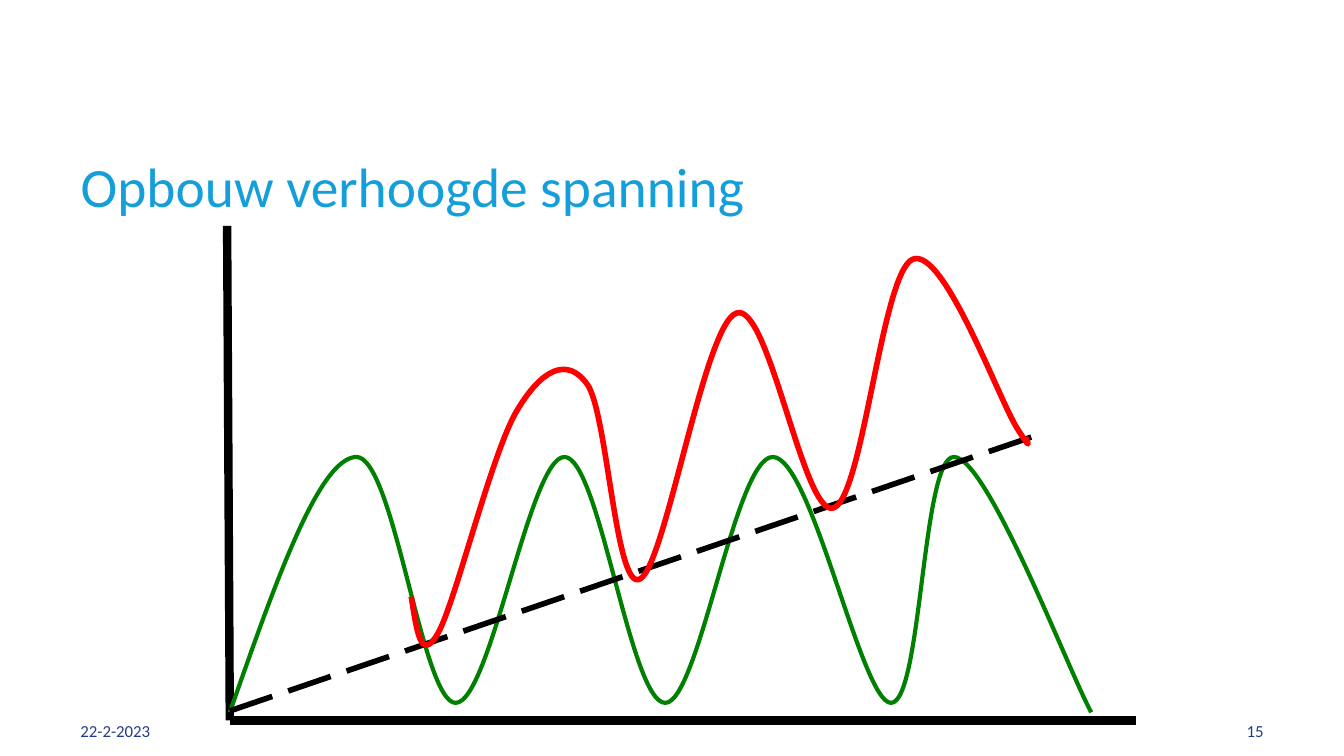
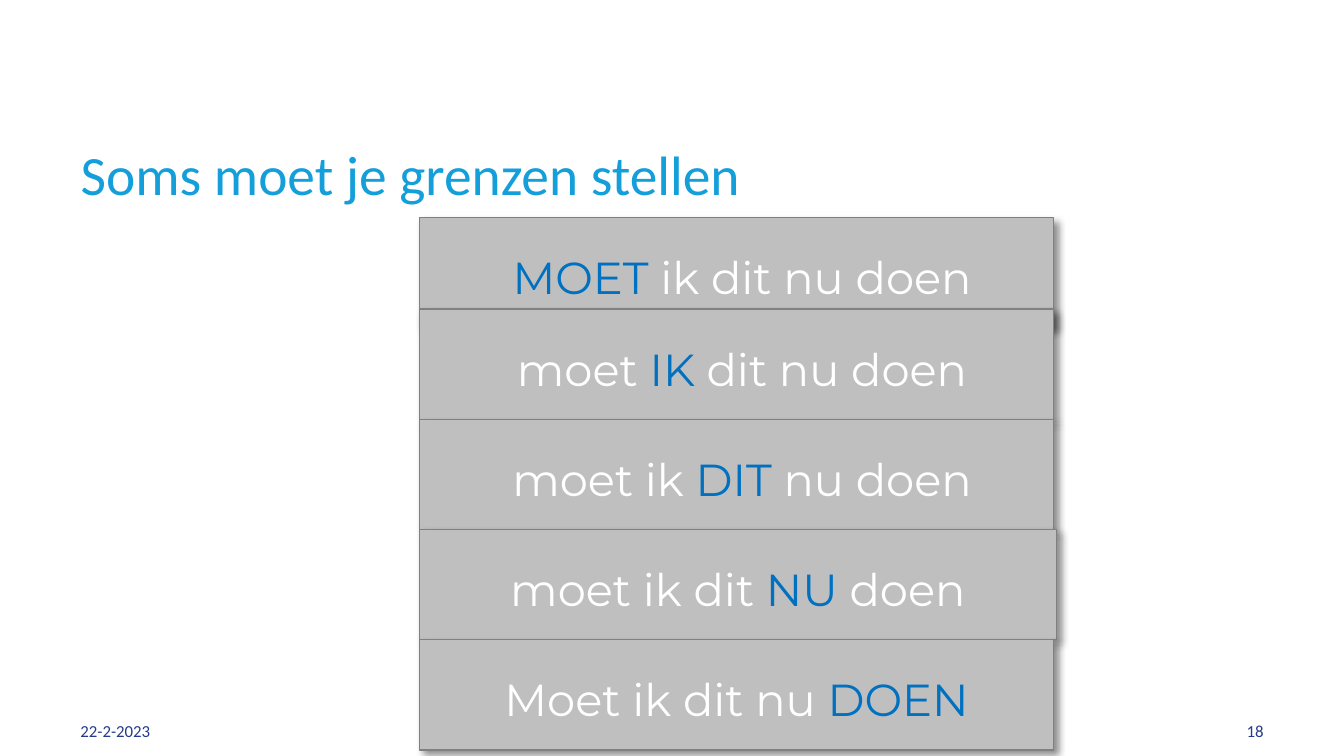
"""Build two slides: a rising-tension chart and a stack of stressed questions."""
import pptx
import pptx.dml.color
import pptx.enum.dml
import pptx.enum.shapes
import pptx.enum.text
import pptx.oxml
import pptx.oxml.ns
import pptx.util

PX = 9144
TITLE, FOOTER, ACCENT = "149FDB", "243B8B", "0070C0"
WHITE, BLACK, GREEN, RED = "FFFFFF", "000000", "008000", "FF0000"
BOX_FILL, BOX_LINE = "BFBFBF", "808080"
ALIGN = pptx.enum.text.PP_ALIGN
ANCHOR = pptx.enum.text.MSO_ANCHOR

ORIGIN = (171, 536)
NORMAL_WAVE = [
    (171, 530), (204, 436), (237, 341), (265, 340), (293, 339), (314, 523),
    (339, 523), (365, 523), (394, 340), (420, 340), (446, 340), (469, 523),
    (495, 523), (520, 523), (547, 340), (575, 340), (604, 340), (641, 523),
    (663, 523), (686, 523), (686, 339), (710, 340), (735, 341), (795, 499),
    (812, 530),
]
RAISED_WAVE = [
    (306, 444), (310, 469), (313, 494), (326, 471), (339, 448), (366, 336),
    (385, 305), (403, 275), (422, 265), (437, 286), (452, 307), (458, 440),
    (476, 431), (495, 422), (524, 241), (548, 233), (572, 224), (598, 385),
    (620, 378), (642, 372), (656, 203), (679, 193), (702, 183), (743, 297),
    (757, 319), (771, 341), (762, 324), (763, 325),
]
QUESTIONS = [
    (162, 472, 18, "", "MOET", " ik dit nu doen"),
    (230, 472, 18, "moet ", "IK", " dit nu doen"),
    (312, 472, 18, "moet ik ", "DIT", " nu doen"),
    (394, 474, 10, "moet ik dit ", "NU", " doen"),
    (476, 472, 10, "Moet ik dit nu ", "DOEN", ""),
]
SHADOW = (
    '<a:outerShdw %s blurRad="50800" dist="38100" dir="2700000" algn="tl" rotWithShape="0">'
    '<a:srgbClr val="000000"><a:alpha val="43000"/></a:srgbClr></a:outerShdw>'
    % pptx.oxml.ns.nsdecls("a")
)


def rgb(value):
    """Turn a hex string into a colour."""
    return pptx.dml.color.RGBColor.from_string(value)


def emu(*lengths):
    """Turn px lengths into EMU."""
    return [length * PX for length in lengths]


def style_font(font, name, size, color):
    """Set the typeface, size and colour of a font."""
    font.name = name
    font.size = pptx.util.Pt(size)
    font.color.rgb = rgb(color)


def style_line(line, color, width):
    """Set the colour and width of a line."""
    line.color.rgb = rgb(color)
    line.width = pptx.util.Pt(width)


def set_margins(tf, left, top, right, bottom):
    """Set the four insets of a text frame."""
    tf.margin_left, tf.margin_top, tf.margin_right, tf.margin_bottom = emu(left, top, right, bottom)


def add_footer(s, left, text, align):
    """Add one small text at the foot of the slide."""
    tf = s.shapes.add_textbox(*emu(left, 521, 233, 30)).text_frame
    tf.word_wrap = True
    tf.vertical_anchor = ANCHOR.BOTTOM
    set_margins(tf, 10, 0, 10, 0)
    tf.text = text
    p = tf.paragraphs[0]
    p.alignment = align
    style_font(p.runs[0].font, "Calibri", 9, FOOTER)


def add_slide(prs, title, top, number):
    """Add a slide with its title, date and number."""
    s = prs.slides.add_slide(prs.slide_layouts[5])
    sp = s.shapes.title
    sp.left, sp.top, sp.width, sp.height = emu(50, top, 900, 60)
    tf = sp.text_frame
    tf.auto_size = pptx.enum.text.MSO_AUTO_SIZE.NONE
    tf.vertical_anchor = ANCHOR.TOP
    set_margins(tf, 10, 5, 10, 0)
    tf.text = title
    p = tf.paragraphs[0]
    p.alignment = ALIGN.LEFT
    style_font(p.runs[0].font, "Calibri", 29.7, TITLE)
    add_footer(s, 50, "22-2-2023", ALIGN.LEFT)
    add_footer(s, 717, number, ALIGN.RIGHT)
    return s


def add_line(s, start, end, width, dash=None):
    """Add a straight black line."""
    line = s.shapes.add_connector(
        pptx.enum.shapes.MSO_CONNECTOR.STRAIGHT, *emu(*start, *end))
    style_line(line.line, BLACK, width)
    line.line.dash_style = dash
    line._element.spPr.append(pptx.oxml.parse_xml("<a:effectLst %s/>" % pptx.oxml.ns.nsdecls("a")))


def add_curve(s, points, color, width):
    """Add an open curve whose points are a start and then Bézier triples."""
    builder = s.shapes.build_freeform(*points[0], scale=PX)
    builder.add_line_segments(points[1:], close=False)
    sp = builder.convert_to_shape()
    sp.shadow.inherit = False
    sp.fill.background()
    style_line(sp.line, color, width)
    qn = pptx.oxml.ns.qn
    segments = list(sp._element.iter(qn("a:lnTo")))
    for i in range(0, len(segments), 3):
        first, *others = segments[i:i + 3]
        first.tag = qn("a:cubicBezTo")
        for segment in others:
            first.append(segment[0])
            segment.getparent().remove(segment)


def add_question(s, top, width, margin, before, stressed, after):
    """Add a grey box with a question that stresses one word."""
    sp = s.shapes.add_shape(
        pptx.enum.shapes.MSO_SHAPE.RECTANGLE, *emu(312, top, width, 82))
    sp.fill.solid()
    sp.fill.fore_color.rgb = rgb(BOX_FILL)
    style_line(sp.line, BOX_LINE, 0.75)
    sp.shadow.inherit = False
    effects = sp._element.spPr.find(pptx.oxml.ns.qn("a:effectLst"))
    effects.append(pptx.oxml.parse_xml(SHADOW))
    tf = sp.text_frame
    tf.word_wrap = True
    tf.vertical_anchor = ANCHOR.TOP
    set_margins(tf, margin, 24, 10, 5)
    p = tf.paragraphs[0]
    p.alignment = ALIGN.CENTER
    for text, color in ((before, WHITE), (stressed, ACCENT), (after, WHITE)):
        if text:
            r = p.add_run()
            r.text = text
            style_font(r.font, "Montserrat", 24, color)


def main():
    """Build and save the presentation."""
    prs = pptx.Presentation()
    prs.slide_width = 1000 * PX
    prs.slide_height = prs.slide_width * 9 // 16

    s = add_slide(prs, "Opbouw verhoogde spanning", 108, "15")
    add_line(s, (169, 168), ORIGIN, 4.5)
    add_line(s, ORIGIN, (845, 536), 4.5)
    add_curve(s, NORMAL_WAVE, GREEN, 2.25)
    add_line(s, (171, 529), (771, 324), 3, pptx.enum.dml.MSO_LINE.LONG_DASH)
    add_curve(s, RAISED_WAVE, RED, 3)

    s = add_slide(prs, "Soms moet je grenzen stellen", 99, "18")
    for question in QUESTIONS:
        add_question(s, *question)

    prs.save("out.pptx")


if __name__ == "__main__":
    main()
